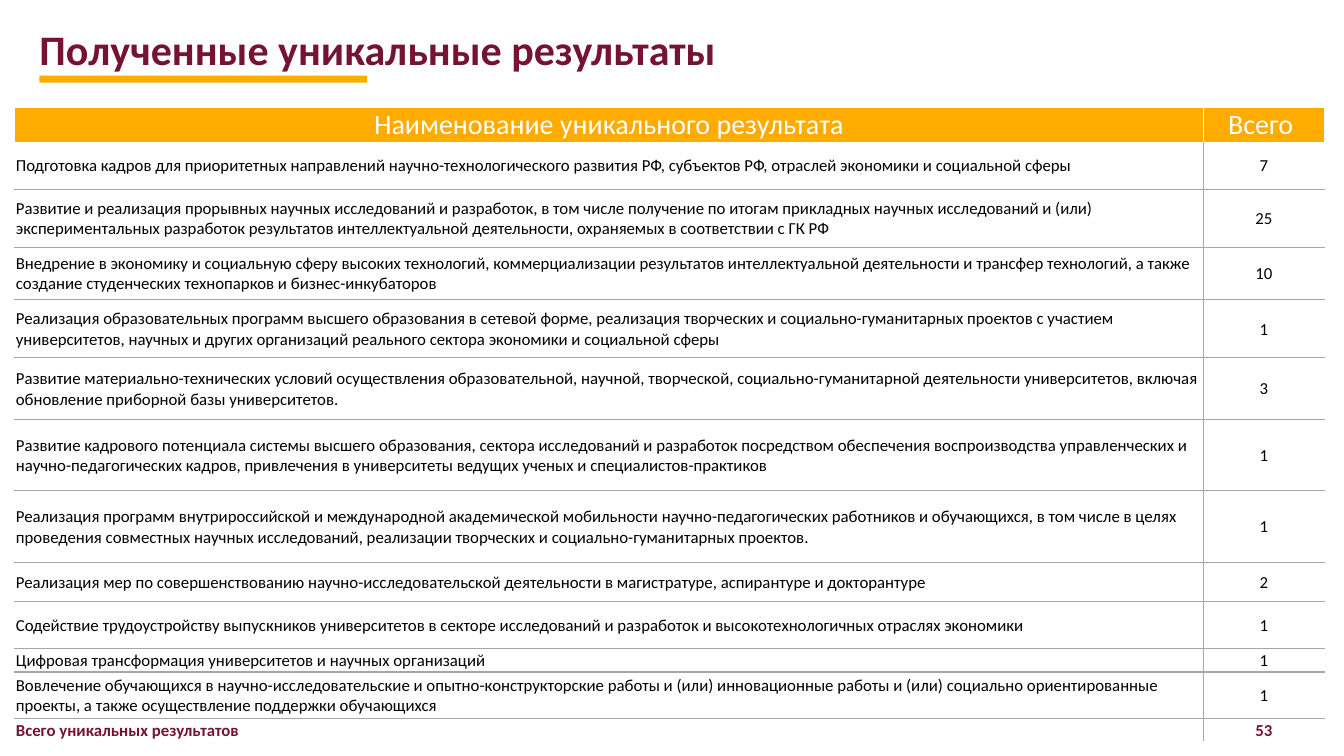
from lxml.etree import SubElement
from pptx import Presentation
from pptx.dml.color import RGBColor
from pptx.enum.shapes import MSO_SHAPE as Preset
from pptx.enum.text import MSO_ANCHOR as Anchor, PP_ALIGN as Align
from pptx.oxml.ns import qn
from pptx.util import Pt

COLORS = {"brand": "741334", "accent": "FFAB00", "grid": "A6A6A6",
          "text": "000000", "white": "FFFFFF"}
FONT = "Calibri"
HEADER = ("Наименование уникального результата", "Всего ")
RESULTS = [
    ("Подготовка кадров для приоритетных направлений научно-технологического развития РФ, субъектов РФ, отраслей экономики и социальной сферы", 7, 33.5),
    ("Развитие и реализация прорывных научных исследований и разработок, в том числе получение по итогам прикладных научных исследований и (или) экспериментальных разработок результатов интеллектуальной деятельности, охраняемых в соответствии с ГК РФ", 25, 41.5),
    ("Внедрение в экономику и социальную сферу высоких технологий, коммерциализации результатов интеллектуальной деятельности и трансфер технологий, а также создание студенческих технопарков и бизнес-инкубаторов", 10, 37.5),
    ("Реализация образовательных программ высшего образования в сетевой форме, реализация творческих и социально-гуманитарных проектов с участием университетов, научных и других организаций реального сектора экономики и социальной сферы", 1, 41.5),
    ("Развитие материально-технических условий осуществления образовательной, научной, творческой, социально-гуманитарной деятельности университетов, включая обновление приборной базы университетов.", 3, 44),
    ("Развитие кадрового потенциала системы высшего образования, сектора исследований и разработок посредством обеспечения воспроизводства управленческих и научно-педагогических кадров, привлечения в университеты ведущих ученых и специалистов-практиков", 1, 51),
    ("Реализация программ внутрироссийской и международной академической мобильности научно-педагогических работников и обучающихся, в том числе в целях проведения совместных научных исследований, реализации творческих и социально-гуманитарных проектов.", 1, 51),
    ("Реализация мер по совершенствованию научно-исследовательской деятельности в магистратуре, аспирантуре и докторантуре", 2, 28),
    ("Содействие трудоустройству выпускников университетов в секторе исследований и разработок и высокотехнологичных отраслях экономики", 1, 33.5),
    ("Цифровая трансформация университетов и научных организаций", 1, 17),
    ("Вовлечение обучающихся в научно-исследовательские и опытно-конструкторские работы и (или) инновационные работы и (или) социально ориентированные проекты, а также осуществление поддержки обучающихся", 1, 33),
]
TOTAL_LABEL = "Всего уникальных результатов"
HEADER_HEIGHT, TOTAL_HEIGHT, COUNT_WIDTH = 24.3, 17, 86.5


def rgb(name):
    return RGBColor.from_string(COLORS[name])


def style(paragraph, size, color, bold=False):
    font = paragraph.font
    font.name, font.size, font.bold = FONT, Pt(size), bold
    font.color.rgb = rgb(color)


def set_borders(cell, sides):
    properties = cell._tc.get_or_add_tcPr()
    for position, (side, color) in enumerate(sides.items()):
        line = SubElement(properties, qn(f"a:ln{side}"), w=str(Pt(1)))
        fill = SubElement(line, qn("a:solidFill"))
        SubElement(fill, qn("a:srgbClr"), val=COLORS[color])
        properties.insert(position, line)


def add_heading(slide, left, top, width, height):
    title = slide.shapes.title
    title.left, title.top, title.width, title.height = map(Pt, (left, top, width, height))
    frame = title.text_frame
    frame.text = "Полученные уникальные результаты"
    frame.vertical_anchor = Anchor.TOP
    frame.word_wrap = True
    heading = frame.paragraphs[0]
    heading.alignment = Align.LEFT
    heading.line_spacing = 0.9
    style(heading, 30, "brand", True)

    underline = slide.shapes.add_shape(
        Preset.RECTANGLE, Pt(left + 7.2), Pt(top + height), Pt(234), Pt(5))
    underline.shadow.inherit = False
    underline.fill.solid()
    underline.fill.fore_color.rgb = rgb("accent")
    underline.line.fill.background()


def add_results(slide, left, top, width):
    total = sum(count for _, count, _ in RESULTS)
    rows = [(*HEADER, HEADER_HEIGHT), *RESULTS, (TOTAL_LABEL, total, TOTAL_HEIGHT)]
    last = len(rows) - 1
    height = sum(row[2] for row in rows)
    table = slide.shapes.add_table(
        len(rows), 2, Pt(left), Pt(top), Pt(width), Pt(height)).table
    table.first_row = table.horz_banding = False
    table.columns[0].width = Pt(width - COUNT_WIDTH)
    table.columns[1].width = Pt(COUNT_WIDTH)

    for index, (label, count, row_height) in enumerate(rows):
        table.rows[index].height = Pt(row_height)
        is_header, is_total = index == 0, index == last
        divider = "white" if is_header else "grid"
        above = "white" if index < 2 else "grid"
        below = "white" if is_header or is_total else "grid"
        for column, content in enumerate((label, count)):
            cell = table.cell(index, column)
            cell.text = str(content)
            cell.vertical_anchor = Anchor.MIDDLE
            cell.margin_left = cell.margin_right = cell.margin_top = Pt(0.75)
            cell.margin_bottom = 0
            entry = cell.text_frame.paragraphs[0]
            entry.alignment = Align.CENTER if is_header or column else Align.LEFT
            if is_header:
                cell.fill.solid()
                cell.fill.fore_color.rgb = rgb("accent")
                style(entry, 20, "white")
            else:
                cell.fill.background()
                style(entry, 12, "brand" if is_total else "text", is_total)
            set_borders(cell, {"L": divider if column else "white",
                               "R": "white" if column else divider,
                               "T": above, "B": below})


def main():
    deck = Presentation()
    deck.slide_width, deck.slide_height = Pt(960), Pt(540)
    slide = deck.slides.add_slide(deck.slide_layouts[5])
    add_heading(slide, 21, 17.3, 627, 36.7)
    add_results(slide, 10.6, 76.4, 935.4)
    deck.save("out.pptx")


if __name__ == "__main__":
    main()
